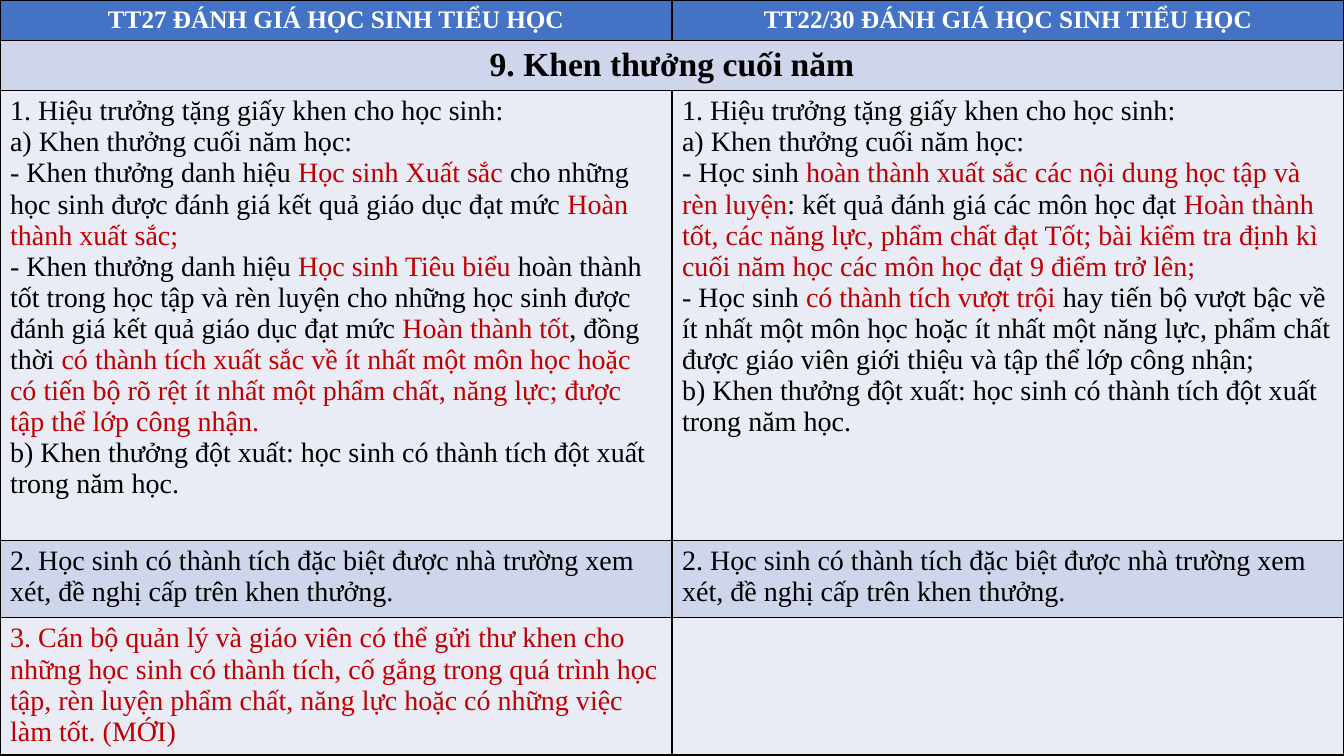
import pptx
import pptx.dml.color
import pptx.enum.text
import pptx.oxml
import pptx.oxml.ns
import pptx.util
from pptx.util import Inches

COLORS = {
    "header": "4472C4", "band_dark": "CFD5EA", "band_light": "E9EBF5",
    "text": "000000", "highlight": "C00000", "header_text": "FFFFFF", "border": "000000",
}
FONT = "Times New Roman"
COLUMN_WIDTH = 6.665
ROW_HEIGHTS = [0.4, 0.5, 4.46, 0.77, 1.36]
HEADINGS = ["TT27 ĐÁNH GIÁ HỌC SINH TIỂU HỌC", "TT22/30 ĐÁNH GIÁ HỌC SINH TIỂU HỌC"]
SECTION = "9. Khen thưởng cuối năm"
AWARD_OPENING = [
    "1. Hiệu trưởng tặng giấy khen cho học sinh:",
    "a) Khen thưởng cuối năm học:",
]
AWARD_CLOSING = ["b) Khen thưởng đột xuất: học sinh có thành tích đột xuất trong năm học."]
TT27_AWARDS = [
    "- Khen thưởng danh hiệu |Học sinh Xuất sắc |cho những học sinh được đánh giá kết quả "
    "giáo dục đạt mức |Hoàn thành xuất sắc;",
    "- Khen thưởng danh hiệu |Học sinh Tiêu biểu |hoàn thành tốt trong học tập và rèn luyện "
    "cho những học sinh được đánh giá kết quả giáo dục đạt mức |Hoàn thành tốt|, đồng thời "
    "|có thành tích xuất sắc về ít nhất một môn học hoặc có tiến bộ rõ rệt ít nhất một "
    "phẩm chất, năng lực; được tập thể lớp công nhận.",
]
TT22_AWARDS = [
    "- Học sinh |hoàn thành xuất sắc các nội dung học tập và rèn luyện|: kết quả đánh giá "
    "các môn học đạt |Hoàn thành tốt, các năng lực, phẩm chất đạt Tốt; bài kiểm tra định kì "
    "cuối năm học các môn học đạt 9 điểm trở lên;",
    "- Học sinh |có thành tích vượt trội |hay tiến bộ vượt bậc về ít nhất một môn học hoặc "
    "ít nhất một năng lực, phẩm chất được giáo viên giới thiệu và tập thể lớp công nhận;",
]
SPECIAL = ["2. Học sinh có thành tích đặc biệt được nhà trường xem xét, "
           "đề nghị cấp trên khen thưởng."]
LETTER = ["|3. Cán bộ quản lý và giáo viên có thể gửi thư khen cho những học sinh có "
          "thành tích, cố gắng trong quá trình học tập, rèn luyện phẩm chất, năng lực hoặc "
          "có những việc làm tốt. (MỚI)"]
BODY_ROWS = [
    [AWARD_OPENING + awards + AWARD_CLOSING for awards in (TT27_AWARDS, TT22_AWARDS)],
    [SPECIAL, SPECIAL],
    [LETTER, []],
]


def rgb(name):
    """Return the named palette colour."""
    return pptx.dml.color.RGBColor.from_string(COLORS[name])


def style_cell(cell, fill):
    """Fill a cell and draw a thin border on its four sides."""
    cell.fill.solid()
    cell.fill.fore_color.rgb = rgb(fill)
    properties = cell._tc.get_or_add_tcPr()
    for position, side in enumerate(("lnL", "lnR", "lnT", "lnB")):
        border = pptx.oxml.parse_xml(
            f'<a:{side} {pptx.oxml.ns.nsdecls("a")} w="12700"><a:solidFill>'
            f'<a:srgbClr val="{COLORS["border"]}"/></a:solidFill></a:{side}>')
        properties.insert(position, border)


def format_run(run, size, color, bold):
    """Set the font of a run."""
    run.font.name = FONT
    run.font.size = pptx.util.Pt(size)
    run.font.bold = bold
    run.font.color.rgb = rgb(color)


def write_title(cell, title, size, color):
    """Write a bold, centred line in a cell."""
    cell.vertical_anchor = pptx.enum.text.MSO_ANCHOR.MIDDLE
    paragraph = cell.text_frame.paragraphs[0]
    paragraph.text = title
    paragraph.alignment = pptx.enum.text.PP_ALIGN.CENTER
    format_run(paragraph.runs[0], size, color, True)


def write_clauses(cell, clauses):
    """Write one paragraph per clause, highlighting every second part between bars."""
    frame = cell.text_frame
    for index, clause in enumerate(clauses):
        paragraph = frame.add_paragraph() if index else frame.paragraphs[0]
        for order, part in enumerate(clause.split("|")):
            if part:
                run = paragraph.add_run()
                run.text = part
                format_run(run, 20, "highlight" if order % 2 else "text", False)


def add_comparison(slide):
    """Add the table that compares the two circulars."""
    comparison = slide.shapes.add_table(
        len(ROW_HEIGHTS), len(HEADINGS), 0, 0,
        Inches(COLUMN_WIDTH * len(HEADINGS)), Inches(sum(ROW_HEIGHTS))).table
    for column in comparison.columns:
        column.width = Inches(COLUMN_WIDTH)
    for index, height in enumerate(ROW_HEIGHTS):
        comparison.rows[index].height = Inches(height)
        band = "band_dark" if index % 2 else "band_light"
        for cell in comparison.rows[index].cells:
            style_cell(cell, band if index else "header")
    for column, heading in enumerate(HEADINGS):
        write_title(comparison.cell(0, column), heading, 18, "header_text")
    comparison.cell(1, 0).merge(comparison.cell(1, 1))
    write_title(comparison.cell(1, 0), SECTION, 24, "text")
    for row, circulars in enumerate(BODY_ROWS, start=2):
        for column, clauses in enumerate(circulars):
            write_clauses(comparison.cell(row, column), clauses)


def main():
    """Build the slide and save it."""
    presentation = pptx.Presentation()
    presentation.slide_width = Inches(13.33)
    presentation.slide_height = Inches(7.5)
    slide = presentation.slides.add_slide(presentation.slide_layouts[6])
    add_comparison(slide)
    presentation.save("out.pptx")


if __name__ == "__main__":
    main()
